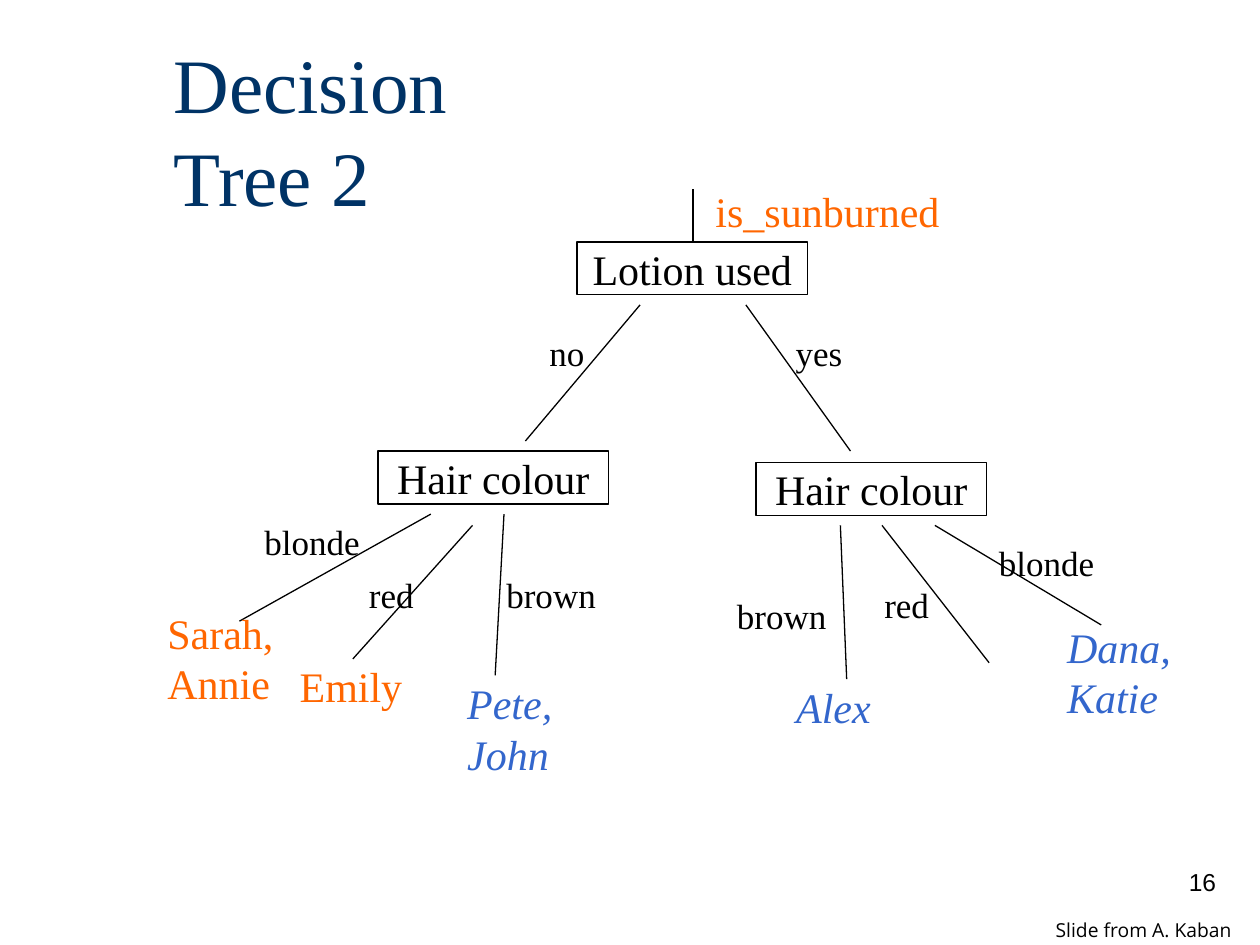
import pptx
import pptx.dml.color
import pptx.enum.shapes
import pptx.enum.text
import pptx.oxml.ns
import pptx.util

RGB = pptx.dml.color.RGBColor
BLACK = RGB(0x00, 0x00, 0x00)
WHITE = RGB(0xFF, 0xFF, 0xFF)
NAVY = RGB(0x00, 0x33, 0x66)
ORANGE = RGB(0xFF, 0x66, 0x00)
BLUE = RGB(0x33, 0x66, 0xCC)

ALIGN = pptx.enum.text.PP_ALIGN
ANCHOR = pptx.enum.text.MSO_ANCHOR
SERIF = "Times New Roman"
SCALE = 9144  # EMU in one px, 100 px to the inch

# Text formats
TITLE = dict(name=SERIF, size=44, color=NAVY)
NODE = dict(name=SERIF, size=24, color=BLACK)
LABEL = dict(name=SERIF, size=20, color=BLACK)
BURNT = dict(name=SERIF, size=24, color=ORANGE)
FINE = dict(name=SERIF, size=24, color=BLUE, italic=True)
PAGE = dict(name="Arial", size=14, color=BLACK)
CREDIT = dict(name="Open Sans", size=11, color=BLACK)


def emu(*px):
    return [pptx.util.Emu(n * SCALE) for n in px]


def write(shape, text, style, align=ALIGN.LEFT, anchor=ANCHOR.TOP, wrap=True):
    frame = shape.text_frame
    frame.word_wrap = wrap
    frame.vertical_anchor = anchor
    par = frame.paragraphs[0]
    par.alignment = align
    run = par.add_run()
    run.text = text
    for key, value in style.items():
        if key == "color":
            run.font.color.rgb = value
        elif key == "size":
            run.font.size = pptx.util.Pt(value)
        else:
            setattr(run.font, key, value)


def note(slide, box, text, style, **layout):
    write(slide.shapes.add_textbox(*emu(*box)), text, style, **layout)


def node(slide, x, y, text):
    rect = pptx.enum.shapes.MSO_SHAPE.RECTANGLE
    shape = slide.shapes.add_shape(rect, *emu(x, y, 183, 42))
    shape.shadow.inherit = False
    shape.fill.solid()
    shape.fill.fore_color.rgb = WHITE
    shape.line.color.rgb = BLACK
    shape.line.width = pptx.util.Pt(0.75)
    write(shape, text, NODE, ALIGN.CENTER, ANCHOR.MIDDLE, False)


def edge(slide, *ends):
    kind = pptx.enum.shapes.MSO_CONNECTOR.STRAIGHT
    line = slide.shapes.add_connector(kind, *emu(*ends))
    line.line.color.rgb = BLACK
    line.line.width = pptx.util.Pt(0.75)
    props = line._element.spPr
    props.append(props.makeelement(pptx.oxml.ns.qn("a:effectLst"), {}))


def branch(slide, x, y, name, spot, edges, labels, leaves, align=ALIGN.LEFT):
    """One test with its edges, edge labels and outcomes, from corner x, y."""
    for x1, y1, x2, y2 in edges:
        edge(slide, x + x1, y + y1, x + x2, y + y2)
    for dx, dy, wide, high, text, style in leaves:
        note(slide, (x + dx, y + dy, wide, high), text, style)
    node(slide, x + spot, y, name)
    for dx, dy, text in labels:
        note(slide, (x + dx, y + dy, 100, 43), text, LABEL, align=align)


def head(slide, x, y):
    note(slide, (x, y, 295, 135), "Decision Tree 2", TITLE, anchor=ANCHOR.MIDDLE)


def tree(slide, x, y):
    # Root test, with the target above it
    branch(
        slide, x + 277, y + 50, "Lotion used", 58,
        edges=[(150, -42, 150, 0), (108, 50, 17, 158), (192, 50, 275, 166)],
        labels=[(0, 66, "no"), (200, 66, "yes")],
        leaves=[(158, -50, 317, 50, "is_sunburned", BURNT)],
        align=ALIGN.CENTER,
    )
    # No lotion
    branch(
        slide, x, y + 216, "Hair colour", 177,
        edges=[(219, 50, 67, 135), (252, 59, 157, 165), (277, 50, 270, 178)],
        labels=[(77, 50, "blonde"), (160, 92, "red"), (269, 92, "brown")],
        leaves=[
            (0, 119, 115, 90, "Sarah, Annie", BURNT),
            (105, 161, 110, 50, "Emily", BURNT),
            (238, 175, 115, 90, "Pete, John", FINE),
        ],
    )
    # Lotion
    branch(
        slide, x + 452, y + 225, "Hair colour", 25,
        edges=[(92, 50, 97, 172), (125, 50, 210, 159), (167, 50, 299, 129)],
        labels=[(0, 100, "brown"), (117, 91, "red"), (208, 58, "blonde")],
        leaves=[
            (47, 169, 88, 50, "Alex", FINE),
            (262, 121, 115, 90, "Dana, Katie", FINE),
        ],
    )


def foot(slide, x, y):
    note(slide, (x, y, 208, 50), "16", PAGE, align=ALIGN.RIGHT)
    note(slide, (x + 61, y + 41, 168, 29), "Slide from A. Kaban", CREDIT, wrap=False)


def main():
    deck = pptx.Presentation()
    deck.slide_width, deck.slide_height = emu(1000, 750)
    slide = deck.slides.add_slide(deck.slide_layouts[6])
    head(slide, 128, 35)
    tree(slide, 123, 142)
    foot(slide, 767, 683)
    deck.save("out.pptx")


if __name__ == "__main__":
    main()
